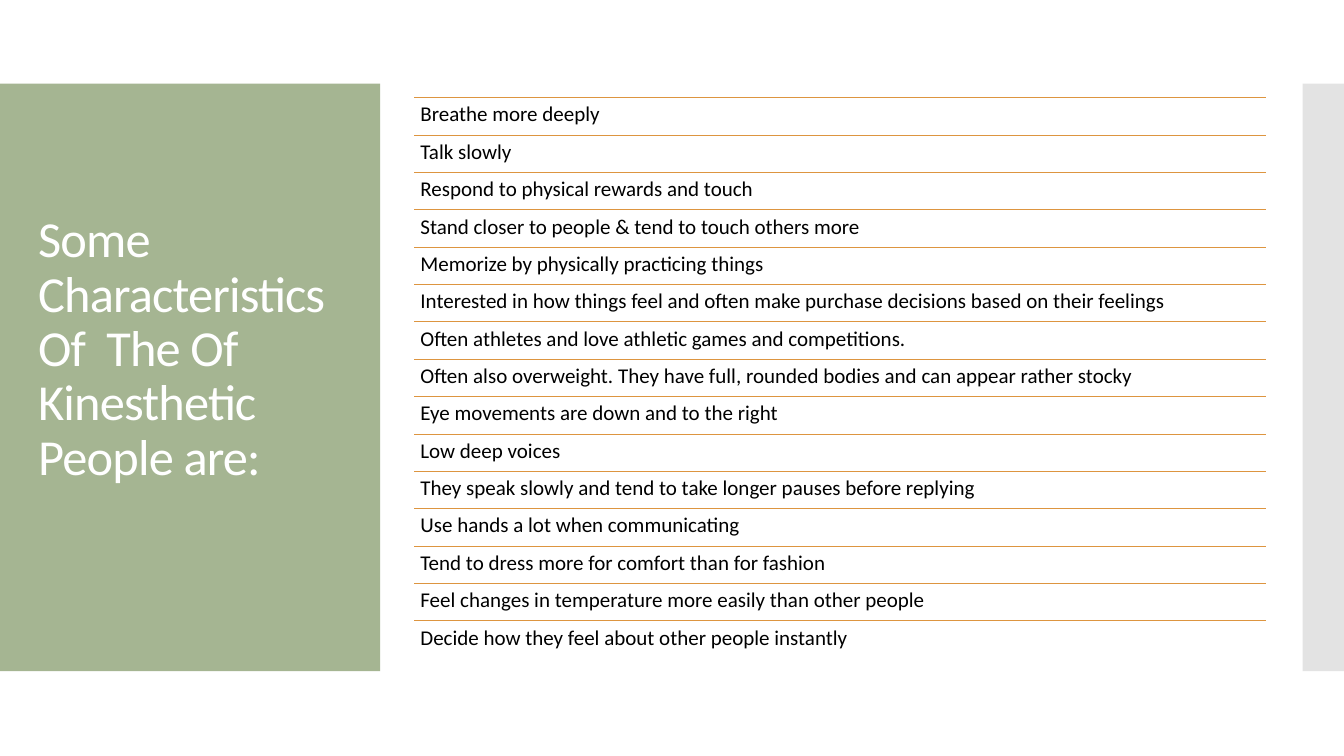
from lxml import etree
from pptx import Presentation
from pptx.dml.color import RGBColor
from pptx.enum.shapes import MSO_CONNECTOR, MSO_SHAPE
from pptx.enum.text import MSO_ANCHOR
from pptx.oxml.ns import qn
from pptx.util import Inches, Pt

TRAITS = [
    "Breathe more deeply",
    "Talk slowly",
    "Respond to physical rewards and touch",
    "Stand closer to people & tend to touch others more",
    "Memorize by physically practicing things",
    "Interested in how things feel and often make purchase decisions based on their feelings",
    "Often athletes and love athletic games and competitions.",
    "Often also overweight. They have full, rounded bodies and can appear rather stocky",
    "Eye movements are down and to the right",
    "Low deep voices",
    "They speak slowly and tend to take longer pauses before replying",
    "Use hands a lot when communicating",
    "Tend to dress more for comfort than for fashion",
    "Feel changes in temperature more easily than other people",
    "Decide how they feel about other people instantly",
]


def rgb(color):
    return RGBColor.from_string(color)


class Deck:
    """Draws elements on the current slide in one shared style."""

    font = "Calibri"
    rule = "DD9540"

    def __init__(self):
        self.prs = Presentation()
        self.prs.slide_width = Inches(13.33)
        self.prs.slide_height = Inches(7.5)
        self.s = self.prs.slides.add_slide(self.prs.slide_layouts[6])

    def panel(self, x, y, w, h, color, opacity=100):
        sp = self.s.shapes.add_shape(
            MSO_SHAPE.RECTANGLE, Inches(x), Inches(y), Inches(w), Inches(h))
        sp.shadow.inherit = False
        sp.line.fill.background()
        sp.fill.solid()
        sp.fill.fore_color.rgb = rgb(color)
        if opacity < 100:
            clr = sp.fill._xPr.find(".//" + qn("a:srgbClr"))
            etree.SubElement(clr, qn("a:alpha")).set("val", str(opacity * 1000))

    def line(self, x1, y1, x2, y2):
        c = self.s.shapes.add_connector(
            MSO_CONNECTOR.STRAIGHT, Inches(x1), Inches(y1), Inches(x2), Inches(y2))
        c.line.color.rgb = rgb(self.rule)
        c.line.width = Pt(0.75)
        etree.SubElement(c._element.spPr, qn("a:effectLst"))

    def text(self, x, y, w, h, text, size, color, insets, anchor=MSO_ANCHOR.TOP, spacing=0):
        tf = self.s.shapes.add_textbox(Inches(x), Inches(y), Inches(w), Inches(h)).text_frame
        tf.word_wrap = True
        tf.vertical_anchor = anchor
        tf.margin_left, tf.margin_top, tf.margin_right, tf.margin_bottom = map(Inches, insets)
        p = tf.paragraphs[0]
        p.line_spacing = 0.9
        p.font.name = self.font
        p.font.size = Pt(size)
        p.font.color.rgb = rgb(color)
        r = p.add_run()
        r.text = text
        if spacing:
            r._r.get_or_add_rPr().set("spc", str(round(spacing * 100)))


def main():
    deck = Deck()
    deck.panel(0, 0.83, 3.77, 5.83, "A5B592")
    deck.panel(12.92, 0.83, 0.41, 5.83, "C8C8C8", opacity=50)
    deck.text(0.28, 1.23, 3.22, 5.03,
              "Some Characteristics Of  The Of Kinesthetic People are:",
              36, "FFFFFF", (0.1, 0.05, 0.1, 0.59), MSO_ANCHOR.MIDDLE, spacing=-0.6)
    left, top, width, pitch = 4.11, 0.97, 8.45, 5.19 / 14
    for i, trait in enumerate(TRAITS):
        y = top + i * pitch
        deck.line(left, y, left + width, y)
        deck.text(left, y, width, pitch, trait, 15, "000000", (0.06,) * 4)
    deck.prs.save("out.pptx")


if __name__ == "__main__":
    main()
